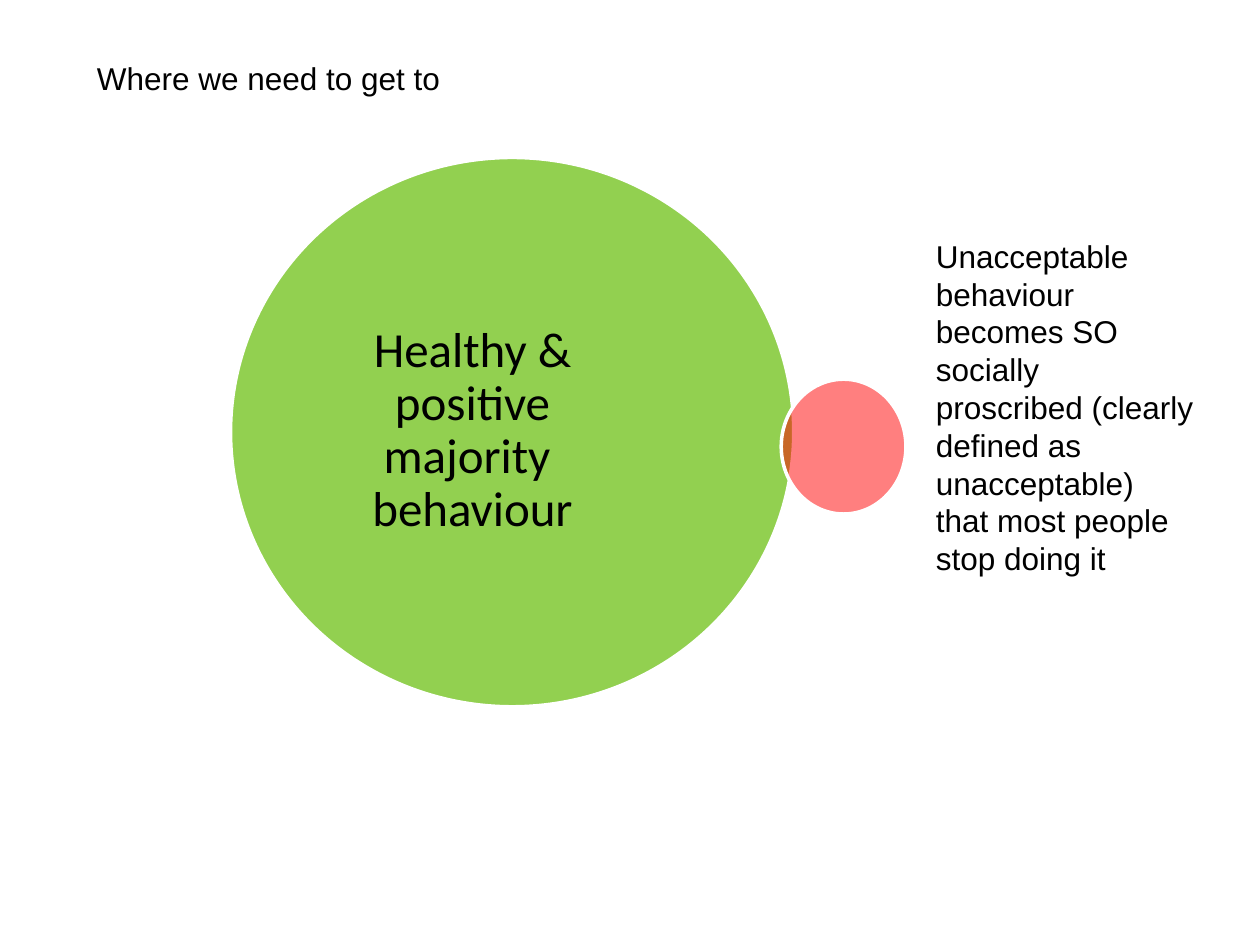
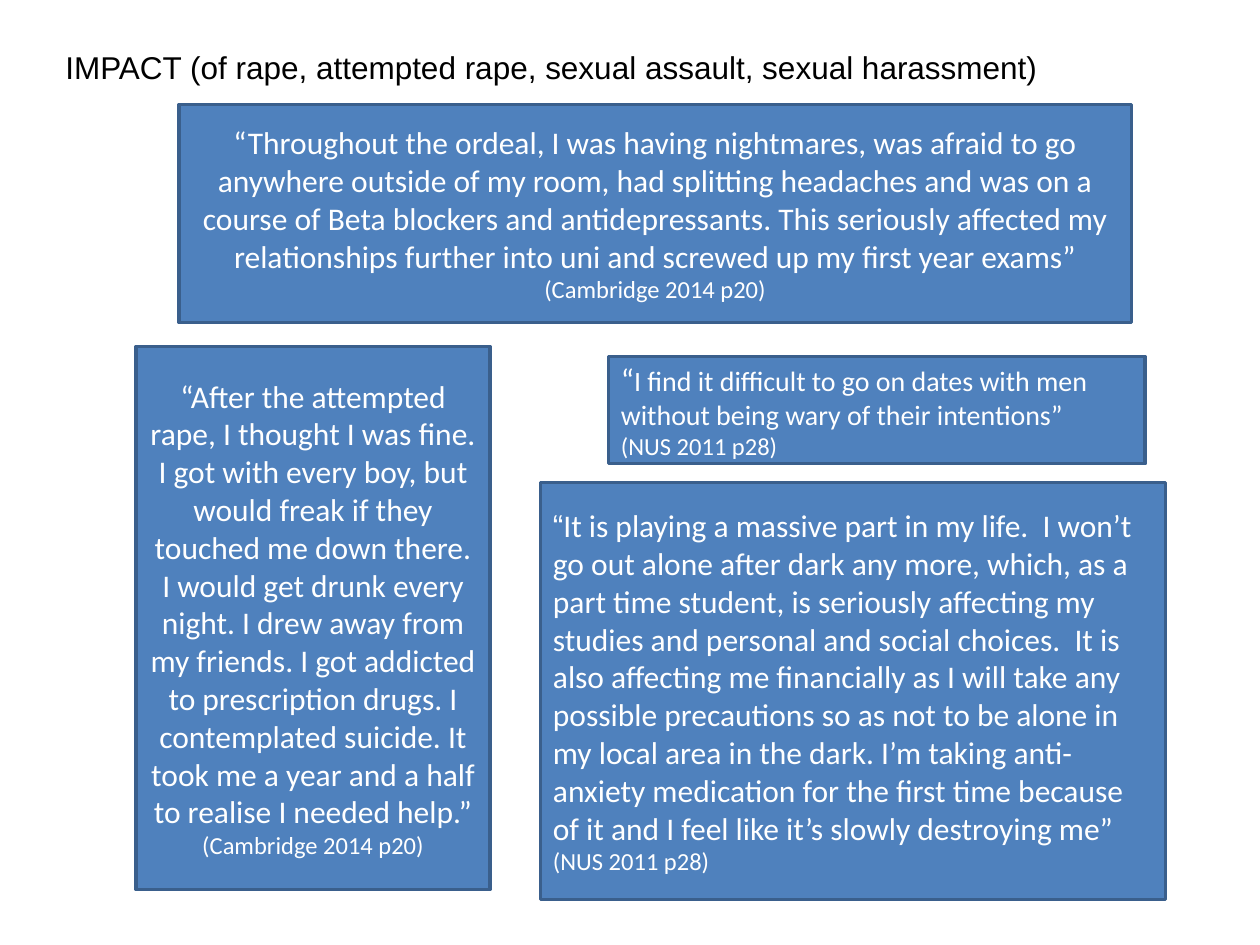
"""Build two slides on behaviour and its impact."""
from dataclasses import dataclass
from typing import Any

from lxml import etree
from pptx import Presentation
from pptx import util as u
from pptx.dml.color import RGBColor
from pptx.enum import shapes, text
from pptx.oxml import ns

SCALE = 9144
BLACK, WHITE, GREEN, RED = "000000", "FFFFFF", "92D050", "FF0000"
BLUE, NAVY = "4F81BD", "3A5F8C"
SANS, BODY = "Arial", "Calibri"
MID = text.PP_ALIGN.CENTER
LEFT = text.PP_ALIGN.LEFT
OVAL = shapes.MSO_SHAPE.OVAL
RECT = shapes.MSO_SHAPE.RECTANGLE
FIT = text.MSO_AUTO_SIZE.SHAPE_TO_FIT_TEXT
ANCHOR = text.MSO_ANCHOR.MIDDLE


@dataclass(frozen=True)
class Box:
    left: int
    top: int
    width: int
    height: int

    def emu(self) -> list[u.Emu]:
        return [u.Emu(n * SCALE) for n in (self.left, self.top, self.width, self.height)]


@dataclass(frozen=True)
class Run:
    words: str
    size: int = 18
    face: str = BODY


@dataclass(frozen=True)
class Quote:
    box: Box
    lines: list[list[Run]]
    align: Any = LEFT


CIRCLES = [(Box(183, 125, 447, 436), GREEN, 100), (Box(620, 301, 99, 107), RED, 50)]

QUOTES = [
    Quote(Box(142, 83, 756, 173), [[
        Run("“Throughout the ordeal, I was having nightmares, was afraid to go anywhere "
            "outside of my room, had splitting headaches and was on a course of Beta "
            "blockers and antidepressants. This seriously affected my relationships "
            "further into uni and screwed up my first year exams” "),
        Run("(Cambridge 2014 p20)", 14)]], MID),
    Quote(Box(108, 275, 281, 431), [[
        Run("“After the attempted rape, I thought I was fine. I got with every boy, but "
            "would freak if they touched me down there. I would get drunk every night. "
            "I drew away from my friends. I got addicted to prescription drugs. "
            "I contemplated suicide. It took me a year and a half to realise I needed "
            "help.” "),
        Run("(Cambridge 2014 p20)", 14)]], MID),
    Quote(Box(483, 283, 426, 85), [
        [Run("“"), Run("I find it difficult to go on dates with men without being wary "
                       "of their intentions”", 16)],
        [Run("(NUS 2011 p28)", 14)]]),
    Quote(Box(429, 383, 496, 331), [[
        Run("“", face=SANS),
        Run("It is playing a massive part in my life.  I won’t go out alone after dark "
            "any more, which, as a part time student, is seriously affecting my studies "
            "and personal and social choices.  It is also affecting me financially as "
            "I will take any possible precautions so as not to be alone in my local area "
            "in the dark. I’m taking anti-anxiety medication for the first time because "
            "of it and I feel like it’s slowly destroying me” "),
        Run("(NUS 2011 p28)", 14)]]),
]


def tint(code: str) -> RGBColor:
    return RGBColor.from_string(code)


def apply(item: Any, values: dict[str, Any]) -> None:
    for name, value in values.items():
        setattr(item, name, value)


def write(frame: Any, lines: list[list[Run]], color: str, form: dict[str, Any],
          para: dict[str, Any]) -> None:
    apply(frame, {"word_wrap": True} | form)
    for i, line in enumerate(lines):
        p = frame.add_paragraph() if i else frame.paragraphs[0]
        apply(p, para)
        for run in line:
            r = p.add_run()
            r.text = run.words
            apply(r.font, {"size": u.Pt(run.size), "name": run.face})
            r.font.color.rgb = tint(color)


def draw(slide: Any, kind: Any, box: Box, fill: str, edge: str, alpha: int = 100) -> Any:
    shape = slide.shapes.add_shape(kind, *box.emu())
    shape.shadow.inherit = False
    shape.fill.solid()
    shape.fill.fore_color.rgb = tint(fill)
    shape.line.color.rgb = tint(edge)
    shape.line.width = u.Pt(2)
    if alpha < 100:
        color = shape.fill._xPr.find(".//" + ns.qn("a:srgbClr"))
        etree.SubElement(color, ns.qn("a:alpha"), val=str(alpha * 1000))
    return shape


def label(slide: Any, box: Box, run: Run, form: dict[str, Any],
          para: dict[str, Any]) -> None:
    frame = slide.shapes.add_textbox(*box.emu()).text_frame
    write(frame, [[run]], BLACK, form, para)


def title(slide: Any, box: Box, words: str) -> None:
    label(slide, box, Run(words, face=SANS), {"word_wrap": False, "auto_size": FIT}, {})


def goal(slide: Any) -> None:
    for box, fill, alpha in CIRCLES:
        draw(slide, OVAL, box, fill, WHITE, alpha)
    sides = ("left", "right", "top", "bottom")
    flush = {f"margin_{side}": 0 for side in sides}
    label(slide, Box(246, 176, 258, 333),
          Run("Healthy & positive majority  behaviour", 28),
          flush | {"vertical_anchor": ANCHOR}, {"alignment": MID, "line_spacing": 0.9})
    title(slide, Box(67, 42, 295, 40), "Where we need to get to")
    label(slide, Box(733, 183, 224, 283),
          Run("Unacceptable behaviour becomes SO socially proscribed (clearly defined "
              "as unacceptable) that most people stop doing it", face=SANS),
          {"auto_size": FIT}, {})


def impact(slide: Any) -> None:
    for quote in QUOTES:
        shape = draw(slide, RECT, quote.box, BLUE, NAVY)
        write(shape.text_frame, quote.lines, WHITE, {"vertical_anchor": ANCHOR},
              {"alignment": quote.align})
    title(slide, Box(42, 33, 799, 40),
          "IMPACT (of rape, attempted rape, sexual assault, sexual harassment)")


def main() -> None:
    deck = Presentation()
    apply(deck, {"slide_width": u.Emu(1000 * SCALE), "slide_height": u.Emu(750 * SCALE)})
    for build in (goal, impact):
        build(deck.slides.add_slide(deck.slide_layouts[6]))
    deck.save("out.pptx")


if __name__ == "__main__":
    main()
